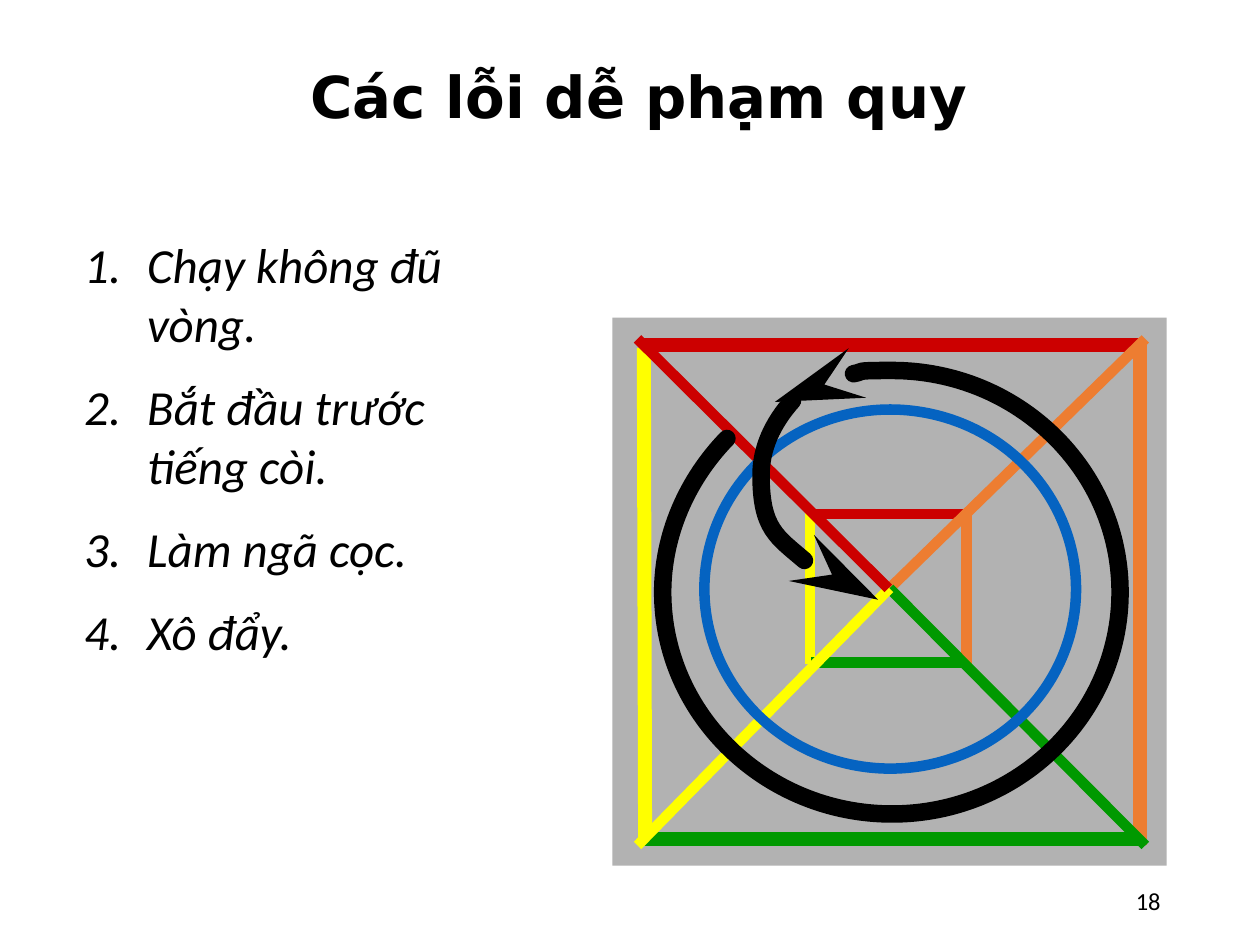
from copy import deepcopy

from lxml import etree
from pptx import Presentation
from pptx.dml.color import RGBColor
from pptx.enum.shapes import MSO_CONNECTOR, MSO_SHAPE
from pptx.enum.text import MSO_ANCHOR, MSO_AUTO_SIZE, PP_ALIGN
from pptx.oxml.ns import qn
from pptx.util import Inches, Pt

LINE = MSO_CONNECTOR.STRAIGHT
RECT, OVAL = MSO_SHAPE.RECTANGLE, MSO_SHAPE.OVAL
TOP, MID = MSO_ANCHOR.TOP, MSO_ANCHOR.MIDDLE
LEFT, CENTER, RIGHT = PP_ALIGN.LEFT, PP_ALIGN.CENTER, PP_ALIGN.RIGHT
GROW = MSO_AUTO_SIZE.SHAPE_TO_FIT_TEXT

COLORS = {
    "black": "000000", "gray": "B2B2B2", "red": "CC0000", "orange": "ED7D31",
    "yellow": "FFFF00", "green": "009900", "blue": "0563C1",
}
RULES = ["Chạy không đũ vòng.", "Bắt đầu trước tiếng còi.", "Làm ngã cọc.", "Xô đẩy."]

# Color, width, start x and y, end x and y
ROPES = [
    ("red", 8, 5.08, 2.74, 9.07, 2.74),
    ("orange", 8, 9.05, 2.74, 9.05, 6.71),
    ("yellow", 6, 6.43, 4.07, 6.43, 5.27),
    ("red", 6, 6.44, 4.08, 7.68, 4.08),
    ("green", 6, 6.44, 5.26, 7.68, 5.26),
    ("orange", 6, 7.67, 4.07, 7.67, 5.27),
    ("orange", 6, 7.05, 4.68, 9.09, 2.69),
    ("green", 6, 9.09, 6.71, 7.06, 4.67),
    ("green", 8, 5.07, 6.66, 9.04, 6.66),
    ("yellow", 6, 5.06, 6.71, 7.06, 4.67),
    ("yellow", 8, 5.11, 2.76, 5.12, 6.65),
    ("red", 6, 7.05, 4.67, 5.06, 2.69),
]
# Start point, then two controls and an end point for each curve; the hub is last
OUTER = [
    (6.15, 3.19), (6.43, 3.03), (6.75, 2.94), (7.08, 2.94),
    (8.08, 2.94), (8.89, 3.73), (8.89, 4.7),
    (8.89, 5.67), (8.08, 6.46), (7.08, 6.46),
    (6.08, 6.46), (5.26, 5.67), (5.26, 4.7),
    (5.26, 4.25), (5.45, 3.81), (5.77, 3.48), (7.08, 4.7),
]
INNER = [
    (6.97, 4.76), (6.41, 4.59), (6.04, 4.2), (6.04, 3.77),
    (6.04, 3.56), (6.13, 3.36), (6.29, 3.18), (7.54, 3.77),
]


def color(name):
    return RGBColor.from_string(COLORS[name])


def stroke(item, name, width):
    item.line.color.rgb = color(name)
    item.line.width = Pt(width)


def add_text(slide, box, lines, size, font, align, anchor, bold=False, italic=False):
    frame = slide.shapes.add_textbox(*map(Inches, box)).text_frame
    frame.word_wrap = True
    frame.vertical_anchor = anchor
    for i, line in enumerate(lines):
        para = frame.add_paragraph() if i else frame.paragraphs[0]
        para.alignment = align
        run = para.add_run()
        run.text = line
        run.font.name, run.font.size = font, Pt(size)
        run.font.bold, run.font.italic = bold, italic
        run.font.color.rgb = color("black")
    return frame


def number(frame):
    """Turn the paragraphs into a numbered list."""
    frame.auto_size = GROW
    for para in frame.paragraphs:
        para.space_before = Pt(14)
        props = para._p.get_or_add_pPr()
        props.set("marL", str(Inches(0.5)))
        props.set("indent", str(Inches(-0.5)))
        etree.SubElement(props, qn("a:buFont"), typeface="+mj-lt")
        etree.SubElement(props, qn("a:buAutoNum"), type="arabicPeriod")


def add_rope(shapes, name, width, *ends):
    rope = shapes.add_connector(LINE, *map(Inches, ends))
    stroke(rope, name, width)
    etree.SubElement(rope._element.spPr, qn("a:effectLst"))


def add_shape(shapes, kind, box):
    shape = shapes.add_shape(kind, *map(Inches, box))
    shape.shadow.inherit = False
    return shape


def bend(shape):
    """Make cubic curves of the corners: an open arc, and its unlined sector."""
    arc = shape._element.find(".//" + qn("a:path"))
    *legs, last = arc.findall(qn("a:lnTo"))
    for i in range(0, len(legs), 3):
        curve = etree.Element(qn("a:cubicBezTo"))
        legs[i].addprevious(curve)
        for leg in legs[i:i + 3]:
            curve.append(leg[0])
            arc.remove(leg)
    sector = deepcopy(arc)
    start = etree.SubElement(sector, qn("a:lnTo"))
    start.append(deepcopy(sector[0][0]))
    etree.SubElement(sector, qn("a:close"))
    sector.set("stroke", "0")
    arc.remove(last)
    arc.set("fill", "none")
    arc.addnext(sector)


def add_arc(shapes, points):
    """Draw a thick curve with an arrowhead at its start."""
    first, *rest = [(Inches(x), Inches(y)) for x, y in points]
    pen = shapes.build_freeform(*first)
    pen.add_line_segments(rest, close=False)
    arc = pen.convert_to_shape()
    bend(arc)
    arc.shadow.inherit = False
    arc.fill.background()
    stroke(arc, "black", 10)
    line = arc.line._get_or_add_ln()
    line.set("cap", "rnd")
    etree.SubElement(line, qn("a:round"))
    etree.SubElement(line, qn("a:headEnd"), type="stealth", w="med", len="lg")


def draw_court(slide):
    shapes = slide.shapes.add_group_shape().shapes
    floor = add_shape(shapes, RECT, (4.86, 2.52, 4.4, 4.35))
    floor.fill.solid()
    floor.fill.fore_color.rgb = color("gray")
    floor.line.fill.background()
    for rope in ROPES:
        add_rope(shapes, *rope)
    ring = add_shape(shapes, OVAL, (5.59, 3.25, 2.95, 2.85))
    ring.fill.background()
    stroke(ring, "blue", 6)
    for points in (OUTER, INNER):
        add_arc(shapes, points)


def main():
    deck = Presentation()
    deck.slide_width, deck.slide_height = Inches(10), Inches(7.5)
    slide = deck.slides.add_slide(deck.slide_layouts[6])
    title = add_text(slide, (0.57, 0.32, 9, 0.94), ["Các lỗi dễ phạm quy"],
                     33, "DejaVu Sans", CENTER, MID, bold=True)
    title.paragraphs[0].line_spacing = 0.9
    add_text(slide, (7.06, 6.95, 2.25, 0.4), ["18"], 14, "Calibri", RIGHT, MID)
    draw_court(slide)
    number(add_text(slide, (0.57, 1.81, 3.67, 3.64), RULES,
                    28, "Calibri", LEFT, TOP, italic=True))
    deck.save("out.pptx")


if __name__ == "__main__":
    main()
